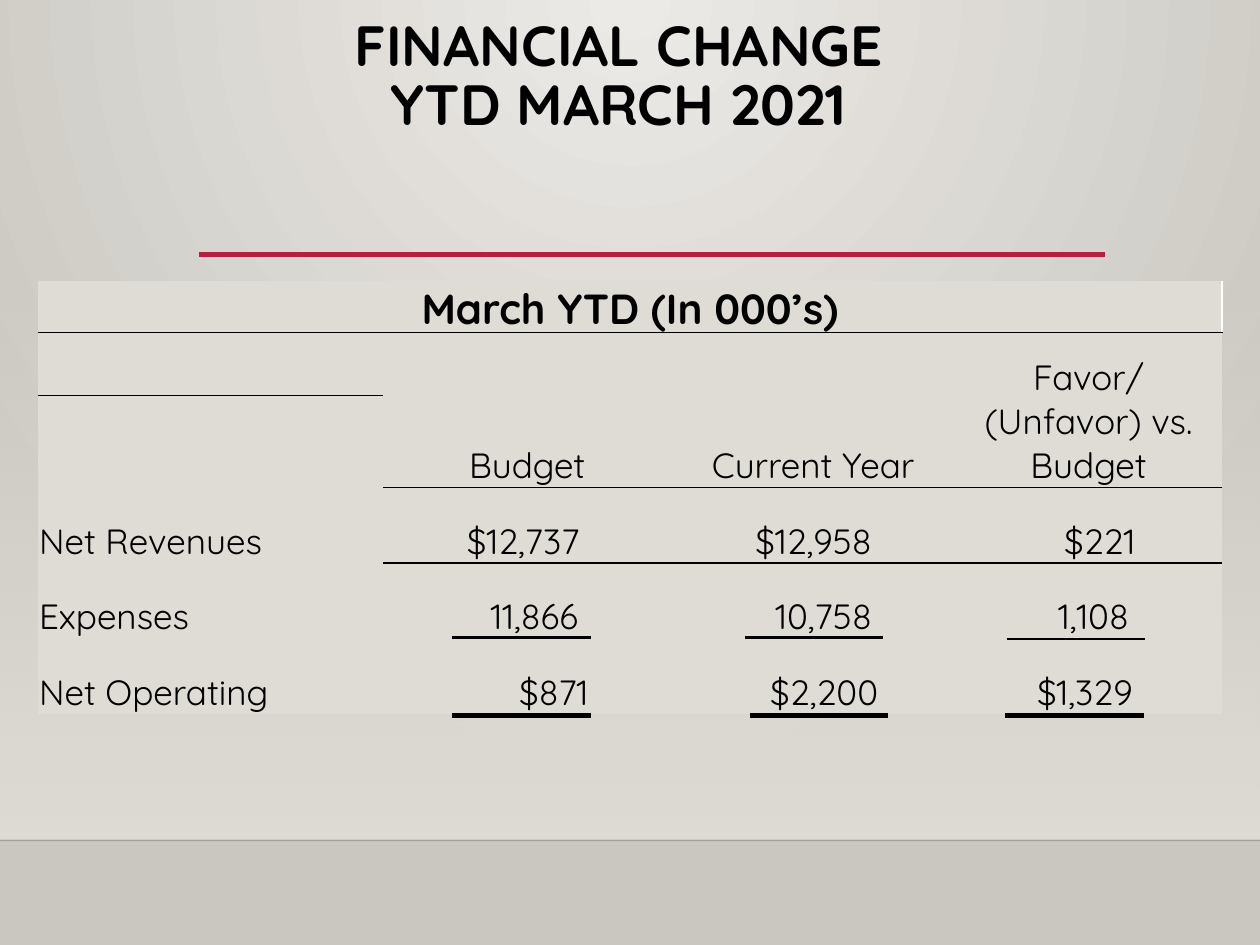
from lxml import etree
from pptx import Presentation
from pptx.dml.color import RGBColor
from pptx.enum.shapes import MSO_CONNECTOR, MSO_SHAPE
from pptx.enum.text import MSO_ANCHOR, PP_ALIGN
from pptx.oxml import parse_xml
from pptx.oxml.ns import nsdecls, qn
from pptx.util import Inches, Pt

STRAIGHT = MSO_CONNECTOR.STRAIGHT
RECTANGLE = MSO_SHAPE.RECTANGLE
TOP, BOTTOM = MSO_ANCHOR.TOP, MSO_ANCHOR.BOTTOM
LEFT, CENTER, RIGHT = PP_ALIGN.LEFT, PP_ALIGN.CENTER, PP_ALIGN.RIGHT

FONT = "Quicksand"
BLACK, WHITE, CRIMSON, SAND = "000000", "FFFFFF", "B71E42", "DFDBD5"
NO_STYLE = "{2D5ABB26-0587-4C30-8999-92F81FD0307C}"
COLUMN_WIDTHS = [2.74, 2.29, 2.25, 2.12]
ROW_HEIGHTS = [0.4, 0.5, 0.34, 0.39, 0.6, 0.6, 0.6]
HEADINGS = ["Budget", "Current Year", "Favor/ (Unfavor) vs. Budget"]
FIRST_FIGURE_ROW = 4
FIGURES = [
    ("Net Revenues", [("$12,737", 0.73), ("$12,958", 0.66), ("$221", 0.69)]),
    ("Expenses", [("11,866", 0.74), ("10,758", 0.66), ("1,108", 0.74)]),
    ("Net Operating", [("$871", 0.66), ("$2,200", 0.61), ("$1,329", 0.71)]),
]
RULE_LENGTH = 1.1
SUBTOTAL_RULES = [(3.59, 5.06), (5.91, 5.06), (7.99, 5.07)]
TOTAL_RULES = [(3.59, 5.68), (5.95, 5.68), (7.98, 5.68)]


def rgb(color):
    """Turn a hex string into a colour."""
    return RGBColor.from_string(color)


def gradient(stops, direction):
    """Build a gradient fill from (position, colour, opacity) stops in percent."""
    marks = "".join(
        f'<a:gs pos="{position * 1000}"><a:srgbClr val="{color}">'
        f'<a:alpha val="{opacity * 1000}"/></a:srgbClr></a:gs>'
        for position, color, opacity in stops
    )
    return parse_xml(
        f'<a:gradFill {nsdecls("a")} rotWithShape="1">'
        f"<a:gsLst>{marks}</a:gsLst>{direction}</a:gradFill>"
    )


def set_gradient(owner, fill, stops, direction):
    """Give a background or shape a custom gradient."""
    fill.gradient()
    plain = owner.find(".//" + qn("a:gradFill"))
    plain.getparent().replace(plain, gradient(stops, direction))


def add_backdrop(slide):
    """Draw the radial background and the fading wall above the floor."""
    set_gradient(
        slide.element, slide.background.fill,
        [(0, "ECEAE7", 100), (100, "CAC7C1", 100)],
        '<a:path path="circle"><a:fillToRect l="43000" t="0" r="43000" b="100000"/></a:path>',
    )
    wall = slide.shapes.add_shape(
        RECTANGLE, Inches(0), Inches(2.2), Inches(10), Inches(4.46))
    wall.shadow.inherit = False
    wall.line.fill.background()
    set_gradient(
        wall.element, wall.fill, [(0, SAND, 0), (100, SAND, 100)],
        '<a:lin ang="5400000" scaled="0"/>',
    )


def add_rule(slide, left, top, length, width, color=BLACK, opacity=100):
    """Draw a horizontal line without a shadow."""
    rule = slide.shapes.add_connector(
        STRAIGHT, Inches(left), Inches(top), Inches(left + length), Inches(top))
    rule.line.color.rgb = rgb(color)
    rule.line.width = Pt(width)
    if opacity < 100:
        tint = rule.element.spPr.find(".//" + qn("a:srgbClr"))
        etree.SubElement(tint, qn("a:alpha"), val=str(opacity * 1000))
    etree.SubElement(rule.element.spPr, qn("a:effectLst"))


def write(frame, text, size=20, bold=False, align=CENTER, spacing=None):
    """Write one formatted paragraph into a text frame."""
    paragraph = frame.paragraphs[0]
    paragraph.alignment = align
    paragraph.line_spacing = spacing
    paragraph.text = text
    for run in paragraph.runs:
        run.font.name = FONT
        run.font.size = Pt(size)
        run.font.bold = bold
        run.font.color.rgb = rgb(BLACK)


def add_title(slide, text):
    """Add the centred slide title."""
    box = slide.shapes.add_textbox(
        Inches(0.81), Inches(0.09), Inches(8.2), Inches(1.13))
    frame = box.text_frame
    frame.word_wrap = True
    frame.vertical_anchor = TOP
    frame.margin_top = Inches(0.07)
    write(frame, text, size=32.4, bold=True, spacing=0.86)


def set_borders(cell, **colors):
    """Draw 1 pt borders on the sides R, T or B of a cell, in that order."""
    properties = cell._tc.get_or_add_tcPr()
    for index, (side, color) in enumerate(colors.items()):
        properties.insert(index, parse_xml(
            f'<a:ln{side} {nsdecls("a")} w="12700"><a:solidFill>'
            f'<a:srgbClr val="{color}"/></a:solidFill></a:ln{side}>'
        ))


def prepare_cell(cell):
    """Set the fill, insets and anchor that all cells share."""
    cell.fill.solid()
    cell.fill.fore_color.rgb = rgb(SAND)
    cell.margin_left = cell.margin_right = cell.margin_top = Inches(0.01)
    cell.margin_bottom = 0
    cell.vertical_anchor = BOTTOM


def add_financial_table(slide):
    """Add the budget comparison table."""
    graphic = slide.shapes.add_table(
        len(ROW_HEIGHTS), len(COLUMN_WIDTHS),
        Inches(0.3), Inches(2.23), Inches(9.4), Inches(3.43))
    table = graphic.table
    table.first_row = table.horz_banding = False
    graphic.element.find(".//" + qn("a:tableStyleId")).text = NO_STYLE
    for column, width in zip(table.columns, COLUMN_WIDTHS):
        column.width = Inches(width)
    for row, height in zip(table.rows, ROW_HEIGHTS):
        row.height = Inches(height)
    for cell in table.iter_cells():
        prepare_cell(cell)

    caption = table.cell(0, 0)
    caption.merge(table.cell(0, len(COLUMN_WIDTHS) - 1))
    write(caption.text_frame, "March YTD (In 000’s)", size=24, bold=True)
    set_borders(caption, R=WHITE, B=BLACK)
    set_borders(table.cell(1, 0), T=BLACK)
    for column, heading in enumerate(HEADINGS, 1):
        cell = table.cell(1, column)
        cell.merge(table.cell(FIRST_FIGURE_ROW - 1, column))
        write(cell.text_frame, heading)
        set_borders(cell, T=BLACK, B=BLACK)
        set_borders(table.cell(FIRST_FIGURE_ROW, column), T=BLACK)
    for row, (label, amounts) in enumerate(FIGURES, FIRST_FIGURE_ROW):
        write(table.cell(row, 0).text_frame, label, align=LEFT)
        for column, (amount, inset) in enumerate(amounts, 1):
            cell = table.cell(row, column)
            cell.margin_right = Inches(inset)
            write(cell.text_frame, amount, align=RIGHT)


def main():
    """Build and save the slide."""
    presentation = Presentation()
    presentation.slide_width, presentation.slide_height = Inches(10), Inches(7.5)
    slide = presentation.slides.add_slide(presentation.slide_layouts[6])
    add_backdrop(slide)
    add_rule(slide, 0, 6.67, 10, 1, color="000001", opacity=20)
    add_rule(slide, 1.58, 2.02, 7.19, 2.5, color=CRIMSON)
    add_title(slide, "FINANCIAL CHANGE\vYTD MARCH 2021")
    add_financial_table(slide)
    for rules, width in ((TOTAL_RULES, 3), (SUBTOTAL_RULES, 1.25)):
        for left, top in rules:
            add_rule(slide, left, top, RULE_LENGTH, width)
    presentation.save("out.pptx")


if __name__ == "__main__":
    main()
